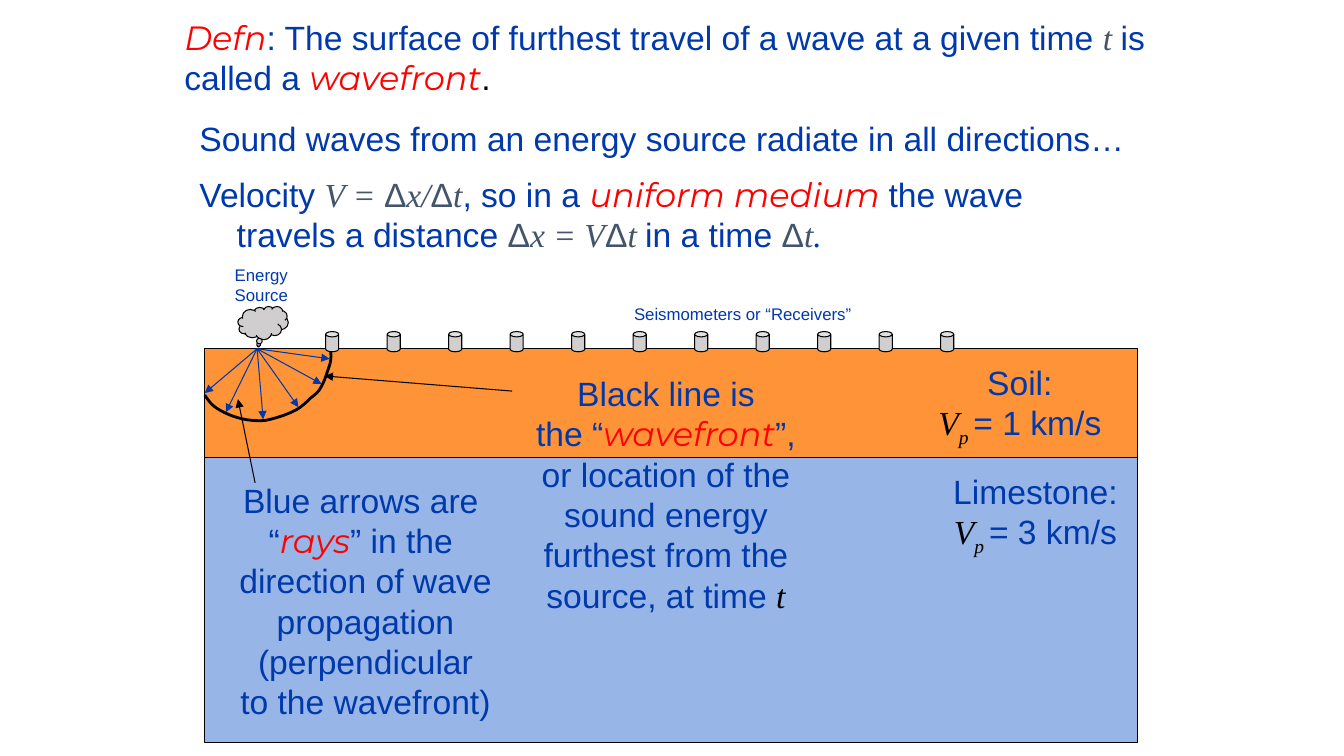
from lxml import etree
from pptx import Presentation
from pptx import util as u
from pptx.dml.color import RGBColor
from pptx.enum import shapes, text
from pptx.oxml import ns

HUES = {"blue": "0039AC", "red": "FF0000", "slate": "44546A", "black": "000000",
        "soil": "FF9338", "lime": "97B5E6", "grey": "D0CECE"}
ARIAL = {"name": "Arial", "italic": False}
TIMES = {"name": "Times New Roman", "italic": True}
MONT = {"name": "Montserrat", "italic": True}
# Run styles: font values and colour
STYLES = {"body": (ARIAL, "blue"), "delta": (ARIAL, "slate"), "dot": (ARIAL, "black"),
          "math": (TIMES, "slate"), "var": (TIMES, "black"), "sub": (TIMES, "black"),
          "stop": (TIMES, "blue"), "key": (MONT, "red")}
FRAME = {"word_wrap": False, "auto_size": text.MSO_AUTO_SIZE.SHAPE_TO_FIT_TEXT}
LEFT, MID = text.PP_ALIGN.LEFT, text.PP_ALIGN.CENTER
SOURCE = (2.55, 3.46)
RAYS = [(2.03, 3.9), (2.24, 4.09), (2.61, 4.16), (2.96, 4.04), (3.19, 3.81), (3.27, 3.56)]
# Bezier chain: a start, then two handles and an end for each piece
FRONT = [(3.28, 3.46),
         (3.28, 3.51), (3.29, 3.56), (3.27, 3.62),
         (3.25, 3.68), (3.22, 3.78), (3.19, 3.83),
         (3.16, 3.89), (3.13, 3.91), (3.08, 3.95),
         (3.04, 3.99), (2.98, 4.05), (2.91, 4.08),
         (2.83, 4.12), (2.73, 4.15), (2.64, 4.17),
         (2.55, 4.18), (2.46, 4.17), (2.38, 4.15),
         (2.3, 4.13), (2.21, 4.09), (2.15, 4.05),
         (2.09, 4.01), (2.06, 3.96), (2.03, 3.92)]


def cm(inch):
    """Length in centimetres from a value in inches."""
    return u.Cm(inch * 2.54)


def hue(name):
    return RGBColor.from_string(HUES[name])


def ink(line, name, width=0.75):
    line.color.rgb = hue(name)
    line.width = u.Pt(width)


def block(slide, kind, box, fill, adjust=()):
    shape = slide.shapes.add_shape(kind, *map(cm, box))
    shape.shadow.inherit = False
    shape.fill.solid()
    shape.fill.fore_color.rgb = hue(fill)
    ink(shape.line, "black")
    for i, val in enumerate(adjust):
        shape.adjustments[i] = val


def arrow(slide, start, end, name):
    line = slide.shapes.add_connector(shapes.MSO_CONNECTOR.STRAIGHT, *map(cm, start + end))
    ink(line.line, name)
    etree.SubElement(line.line._get_or_add_ln(), ns.qn("a:tailEnd"), type="triangle")
    etree.SubElement(line._element.spPr, ns.qn("a:effectLst"))


def curve(slide, chain, steps=8):
    """Open outline sampled along a Bezier chain."""
    points = []
    for k in range(0, len(chain) - 1, 3):
        for n in range(1, steps + 1):
            t = n / steps
            parts = ((1 - t) ** 3, 3 * t * (1 - t) ** 2, 3 * t * t * (1 - t), t ** 3)
            points.append(tuple(cm(sum(w * p[axis] for w, p in zip(parts, chain[k:k + 4])))
                                for axis in (0, 1)))
    path = slide.shapes.build_freeform(*map(cm, chain[0]))
    path.add_line_segments(points, close=False)
    shape = path.convert_to_shape()
    shape.shadow.inherit = False
    shape.fill.background()
    ink(shape.line, "black", 2)


def label(slide, box, lines, size=24, align=MID):
    """Text box; a line is a string or a list of (text, style) runs."""
    frame = slide.shapes.add_textbox(*map(cm, box)).text_frame
    for key, val in FRAME.items():
        setattr(frame, key, val)
    for i, line in enumerate(lines):
        para = frame.add_paragraph() if i else frame.paragraphs[0]
        para.alignment = align
        for words, style in [(line, "body")] if isinstance(line, str) else line:
            run = para.add_run()
            run.text = words
            form, name = STYLES[style]
            for key, val in {**form, "size": u.Pt(size)}.items():
                setattr(run.font, key, val)
            run.font.color.rgb = hue(name)
            if style == "sub":
                run.font._element.set("baseline", "-25000")
    return frame


def speed(slide, box, name, rate):
    label(slide, box, [name, [("V", "var"), ("p ", "sub"), (f"= {rate} km/s", "body")]])


def ground(slide):
    kinds = shapes.MSO_SHAPE
    block(slide, kinds.RECTANGLE, (2.03, 3.46, 9.25, 1.08), "soil")
    block(slide, kinds.RECTANGLE, (2.03, 4.54, 9.25, 2.83), "lime")
    block(slide, kinds.CLOUD_CALLOUT, (2.36, 3.04, 0.5, 0.33), "grey", (-0.094, 0.693))
    curve(slide, FRONT)
    for i in range(11):
        block(slide, kinds.CAN, (3.23 + 0.61 * i, 3.29, 0.13, 0.2), "grey", (0.404,))
    for end in RAYS:
        arrow(slide, SOURCE, end, "blue")
    arrow(slide, (5.08, 3.88), (3.22, 3.73), "black")
    arrow(slide, (2.53, 4.79), (2.36, 3.96), "black")


def notes(slide):
    label(slide, (2.23, 2.58, 0.73, 0.5), ["Energy", "Source"], 12, LEFT)
    label(slide, (6.19, 2.96, 2.43, 0.3), ["Seismometers or “Receivers”"], 12, LEFT)
    speed(slide, (9.17, 3.54, 1.89, 0.91), "Soil:", 1)
    speed(slide, (9.3, 4.62, 1.94, 0.91), "Limestone:", 3)
    label(slide, (5.09, 3.65, 3.03, 2.52), [
        "Black line is",
        [("the “", "body"), ("wavefront", "key"), ("”,", "body")],
        "or location of the", "sound energy", "furthest from the",
        [("source, at time ", "body"), ("t", "var")]])
    label(slide, (2.26, 4.71, 2.73, 2.52), [
        "Blue arrows are ",
        [("“", "body"), ("rays", "key"), ("” in the ", "body")],
        "direction of wave", "propagation", "(perpendicular", "to the wavefront)"])


def intro(slide):
    label(slide, (1.73, 0.12, 9.87, 0.91), [
        [("Defn", "key"),
         (": The surface of furthest travel of a wave at a given time ", "body"),
         ("t ", "math"), ("is", "body")],
        [("called a ", "body"), ("wavefront", "key"), (".", "dot")]], align=LEFT)
    frame = label(slide, (1.88, 1.12, 9.56, 1.46), [
        "Sound waves from an energy source radiate in all directions…",
        [("Velocity ", "body"), ("V = ", "math"), ("Δ", "delta"), ("x/", "math"),
         ("Δ", "delta"), ("t", "math"), (", so in a ", "body"),
         ("uniform medium ", "key"), ("the wave", "body")],
        [("travels a distance ", "body"), ("Δ", "delta"), ("x = V", "math"),
         ("Δ", "delta"), ("t ", "math"), ("in a time ", "body"), ("Δ", "delta"),
         ("t", "math"), (".", "stop")]], align=LEFT)
    first, second, third = frame.paragraphs
    second.space_before = u.Pt(11)
    third._p.get_or_add_pPr().set("marL", str(cm(0.37)))


def main():
    deck = Presentation()
    deck.slide_width, deck.slide_height = cm(13.33), cm(7.5)
    slide = deck.slides.add_slide(deck.slide_layouts[6])
    ground(slide)
    notes(slide)
    intro(slide)
    deck.save("out.pptx")


if __name__ == "__main__":
    main()
